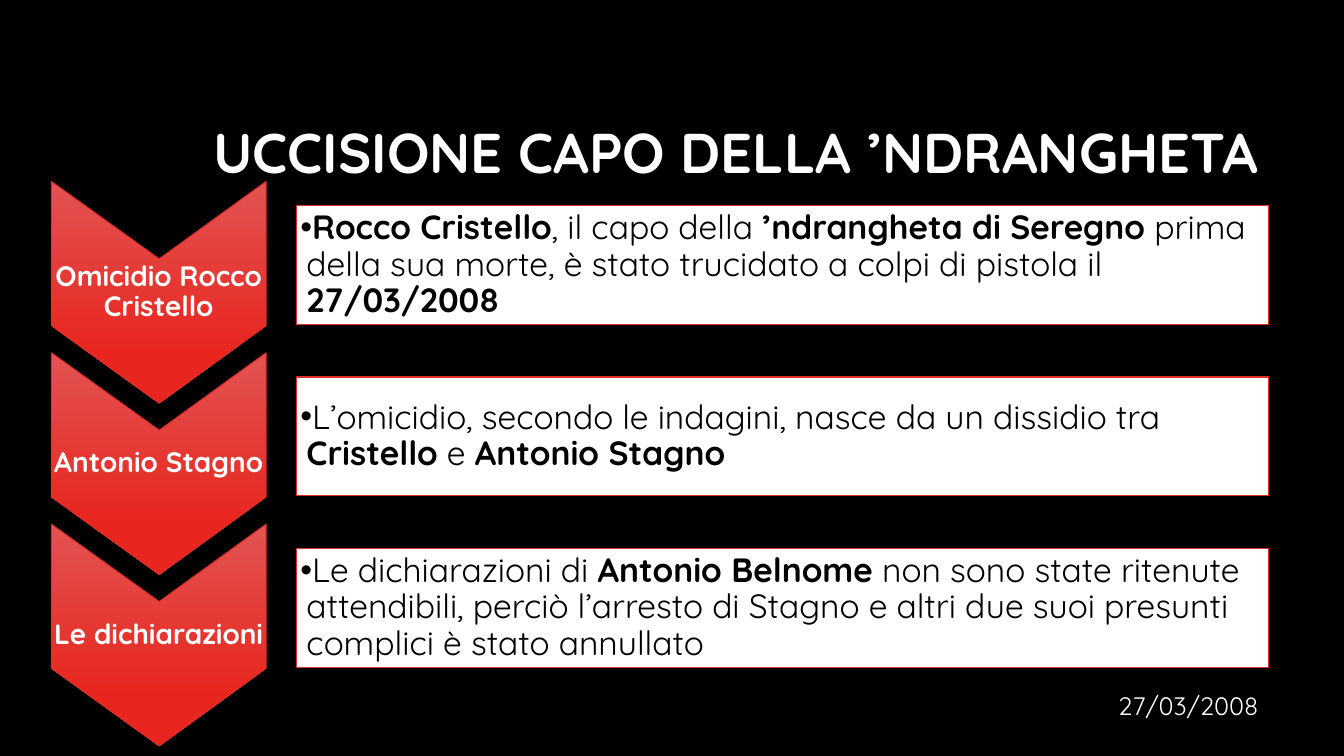
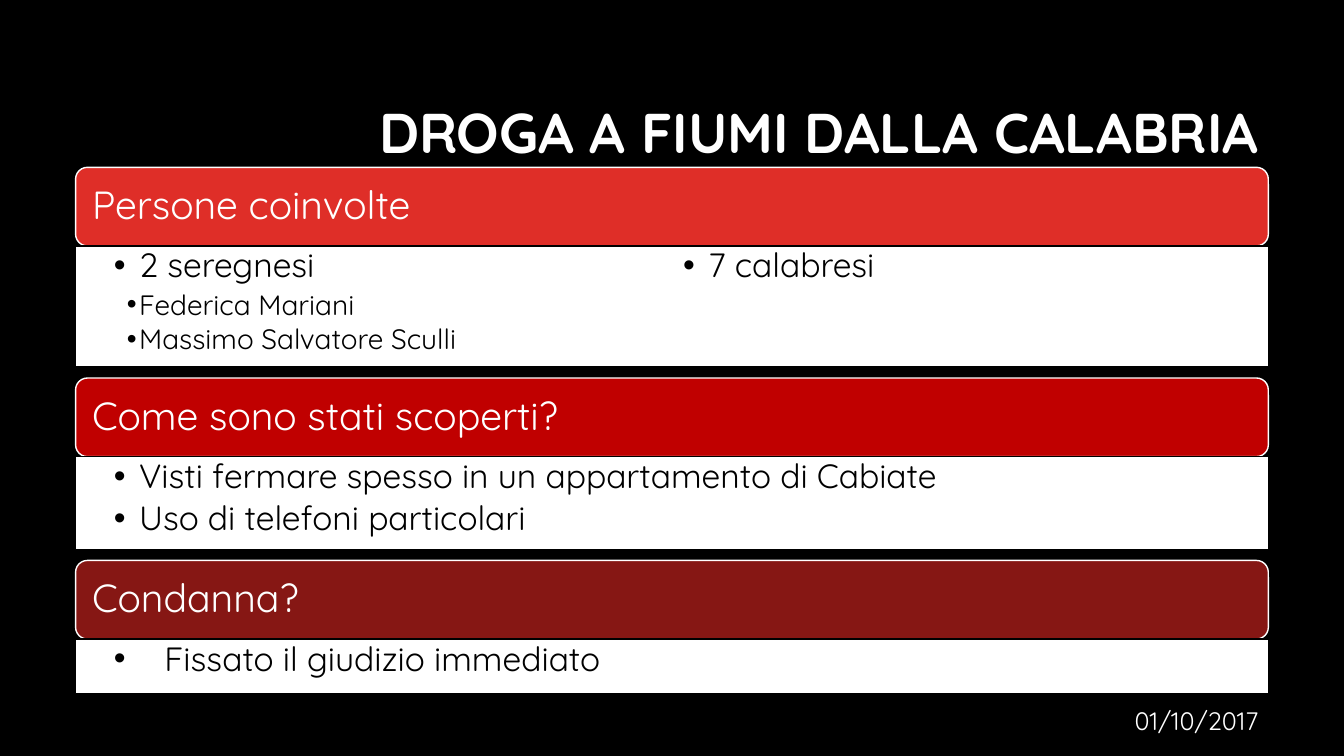
"""Builds two slides on the killing of a clan boss and on a drug trial."""
from lxml import etree
from pptx import Presentation
from pptx import util as u
from pptx.dml.color import RGBColor
from pptx.enum import shapes, text
from pptx.oxml.ns import qn

PX = 9144
FONT = "Quicksand"
COLOURS = {
    "black": "000000", "white": "FFFFFF", "red": "DF2E28", "crimson": "C00000",
    "maroon": "861714", "light red": "E25452", "bright red": "E8251F",
}

KILLING = {
    "title": "UCCISIONE CAPO DELLA ’NDRANGHETA", "title_top": 84,
    "date": "27/03/2008", "date_top": 680,
}
STEPS = [
    ("Omicidio Rocco Cristello",
     "*Rocco Cristello*, il capo della *’ndrangheta di Seregno *prima della sua morte, "
     "è stato trucidato a colpi di pistola il *27/03/2008*"),
    ("Antonio Stagno",
     "L’omicidio, secondo le indagini, nasce da un dissidio tra "
     "*Cristello* e *Antonio Stagno*"),
    ("Le dichiarazioni",
     "Le dichiarazioni di *Antonio Belnome* non sono state ritenute attendibili, "
     "perciò l’arresto di Stagno e altri due suoi presunti complici è stato annullato"),
]

DRUGS = {
    "title": "DROGA A FIUMI DALLA CALABRIA", "title_top": 64,
    "date": "01/10/2017", "date_top": 695,
}
MAIN = {"size": 24, "margin": 25, "hang": 25, "level": 1}
SUB = {"size": 20, "margin": 25, "hang": 12, "level": 2}
WIDE = {"size": 24, "margin": 50, "hang": 50, "level": 0}
TIGHT = {"size": 24, "margin": 6, "hang": 6, "level": 1}
SECTIONS = [
    ("Persone coinvolte", "red", 120, 2,
     [("2 seregnesi", MAIN), ("Federica Mariani", SUB),
      ("Massimo Salvatore Sculli", SUB), ("7 calabresi", MAIN)]),
    ("Come sono stati scoperti?", "crimson", 92, 1,
     [("Visti fermare spesso in un appartamento di Cabiate", MAIN),
      ("Uso di telefoni particolari", MAIN)]),
    ("Condanna?", "maroon", 54, 1, [("Fissato il giudizio immediato", WIDE)]),
]

RIGHT = 1258
STEP_TOP, STEP_PITCH = 180, 170
CHEVRON_LEFT, CHEVRON_WIDTH, CHEVRON_HEIGHT, NOTCH = 51, 213, 220, 77
DETAIL_LEFT, DETAIL_DROP, DETAIL_HEIGHT = 294, 24, 118
SECTION_LEFT, SECTION_TOP, SECTION_GAP, HEADING_HEIGHT = 75, 166, 11, 78


def rgb(colour):
    return RGBColor.from_string(COLOURS[colour])


def px(*lengths):
    return [u.Emu(length * PX) for length in lengths]


def set_frame(frame, insets, anchor=text.MSO_ANCHOR.MIDDLE):
    frame.word_wrap = True
    frame.vertical_anchor = anchor
    (frame.margin_left, frame.margin_top,
     frame.margin_right, frame.margin_bottom) = px(*insets)


def write(paragraph, words, size, colour, align=text.PP_ALIGN.LEFT, bold=None, spacing=0.9):
    paragraph.alignment = align
    paragraph.line_spacing = spacing
    font = paragraph.font
    font.name, font.size, font.bold = FONT, u.Pt(size), bold
    font.color.rgb = rgb(colour)
    for index, part in enumerate(words.split("*")):
        if part:
            run = paragraph.add_run()
            run.text = part
            if index % 2:
                run.font.bold = True


def write_bullets(frame, items):
    for index, (words, style) in enumerate(items):
        paragraph = frame.add_paragraph() if index else frame.paragraphs[0]
        paragraph.level = style["level"]
        properties = paragraph._p.get_or_add_pPr()
        properties.set("marL", str(style["margin"] * PX))
        properties.set("indent", str(-style["hang"] * PX))
        etree.SubElement(properties, qn("a:buFont")).set("typeface", "Arial")
        etree.SubElement(properties, qn("a:buChar")).set("char", "•")
        write(paragraph, words, style["size"], "black")
        if index < len(items) - 1:
            paragraph.space_after = u.Pt(round(style["size"] / 6))


def outline(shape, colour, width):
    shape.shadow.inherit = False
    shape.line.color.rgb = rgb(colour)
    shape.line.width = u.Pt(width)


def add_panel(slide, preset, box, fill, line, line_width):
    panel = slide.shapes.add_shape(preset, *px(*box))
    panel.fill.solid()
    panel.fill.fore_color.rgb = rgb(fill)
    outline(panel, line, line_width)
    return panel


def add_label(slide, words, top, width, height, size, bold, spacing):
    label = slide.shapes.add_textbox(*px(RIGHT - width, top, width, height))
    set_frame(label.text_frame, (10, 5, 10, 5))
    write(label.text_frame.paragraphs[0], words, size, "white",
          text.PP_ALIGN.RIGHT, bold, spacing)


def add_slide(deck, heading):
    slide = deck.slides.add_slide(deck.slide_layouts[6])
    slide.background.fill.solid()
    slide.background.fill.fore_color.rgb = rgb("black")
    add_label(slide, heading["title"], heading["title_top"], 1130, 141, 40, True, 0.9)
    add_label(slide, heading["date"], heading["date_top"], 318, 40, 18, None, 1.0)
    return slide


def add_chevron(slide, top, words):
    left, right = CHEVRON_LEFT, CHEVRON_LEFT + CHEVRON_WIDTH
    middle, bottom = left + CHEVRON_WIDTH / 2, top + CHEVRON_HEIGHT
    builder = slide.shapes.build_freeform(left, top, scale=PX)
    builder.add_line_segments([
        (middle, top + NOTCH), (right, top), (right, bottom - NOTCH),
        (middle, bottom), (left, bottom - NOTCH)], close=True)
    chevron = builder.convert_to_shape()
    chevron.fill.gradient()
    chevron.fill.gradient_angle = 270
    stops = [(0, "light red"), (0.78, "bright red")]
    for stop, (position, colour) in zip(chevron.fill.gradient_stops, stops):
        stop.position = position
        stop.color.rgb = rgb(colour)
    outline(chevron, "red", 0.75)
    set_frame(chevron.text_frame, (1, 53, 1, 53))
    write(chevron.text_frame.paragraphs[0], words, 20, "white", text.PP_ALIGN.CENTER, True)


def add_step(slide, top, name, detail):
    add_chevron(slide, top, name)
    box = (DETAIL_LEFT, top + DETAIL_DROP, RIGHT - DETAIL_LEFT, DETAIL_HEIGHT)
    panel = add_panel(slide, shapes.MSO_SHAPE.RECTANGLE, box, "white", "red", 0.75)
    set_frame(panel.text_frame, (4, 1, 1, 1))
    write_bullets(panel.text_frame, [(detail, TIGHT)])


def add_section(slide, top, name, colour, height, columns, items):
    width = RIGHT - SECTION_LEFT
    heading = add_panel(slide, shapes.MSO_SHAPE.ROUNDED_RECTANGLE,
                        (SECTION_LEFT, top, width, HEADING_HEIGHT), colour, "white", 1)
    heading.adjustments[0] = 0.15
    set_frame(heading.text_frame, (13, 13, 13, 13))
    write(heading.text_frame.paragraphs[0], name, 28, "white")
    body = add_panel(slide, shapes.MSO_SHAPE.RECTANGLE,
                     (SECTION_LEFT, top + HEADING_HEIGHT, width, height), "white", "black", 1)
    set_frame(body.text_frame, (38, 3, 16, 0), text.MSO_ANCHOR.TOP)
    body.text_frame._txBody.bodyPr.set("numCol", str(columns))
    write_bullets(body.text_frame, items)


def main():
    deck = Presentation()
    deck.slide_width, deck.slide_height = px(1333, 750)

    killing = add_slide(deck, KILLING)
    for index, (name, detail) in enumerate(STEPS):
        add_step(killing, STEP_TOP + index * STEP_PITCH, name, detail)

    drugs = add_slide(deck, DRUGS)
    top = SECTION_TOP
    for name, colour, height, columns, items in SECTIONS:
        add_section(drugs, top, name, colour, height, columns, items)
        top += HEADING_HEIGHT + height + SECTION_GAP

    deck.save("out.pptx")


if __name__ == "__main__":
    main()
